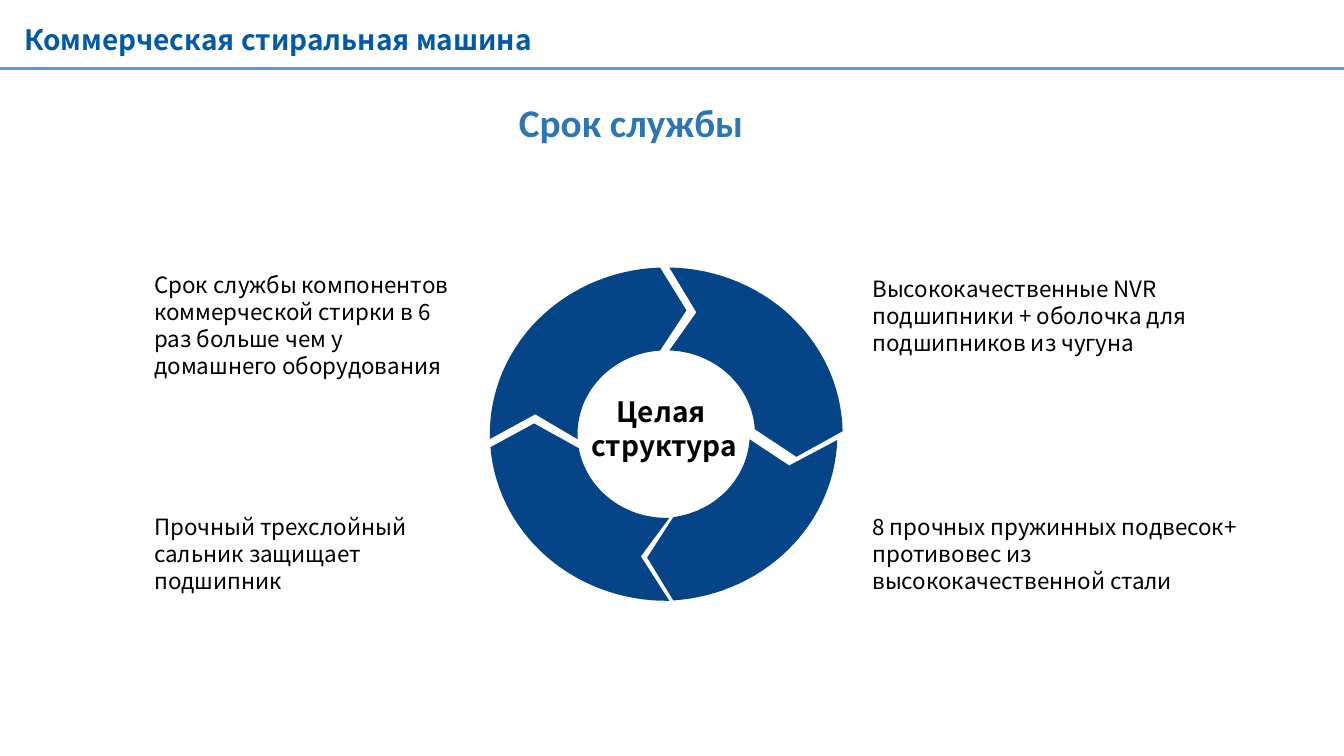
import math

import pptx
import pptx.dml.color
import pptx.enum.shapes
import pptx.enum.text
import pptx.oxml
import pptx.util
from pptx.enum.text import MSO_ANCHOR, MSO_AUTO_SIZE, PP_ALIGN
from pptx.util import Cm, Pt

BODY_FONT = "Noto Sans CJK SC"
RING_CENTER = (16.79, 10.94)
OUTER_RADII = (4.445, 4.2)
INNER_RADII = (2.235, 2.11)


def rgb(hex_color):
    """Turn a hex string into a colour."""
    return pptx.dml.color.RGBColor.from_string(hex_color)


def place(box, left, top, width, height):
    """Set position and size of a shape in centimetres."""
    box.left, box.top, box.width, box.height = map(Cm, (left, top, width, height))


def write(box, text, size, color="000000", font=BODY_FONT, bold=False,
          align=PP_ALIGN.LEFT, anchor=MSO_ANCHOR.TOP, wrap=True, margins=(0.25, 0.13)):
    """Fill a box with text in one format."""
    frame = box.text_frame
    frame.text = text
    frame.word_wrap = wrap
    frame.auto_size = MSO_AUTO_SIZE.NONE if wrap else MSO_AUTO_SIZE.SHAPE_TO_FIT_TEXT
    frame.vertical_anchor = anchor
    frame.margin_left = frame.margin_right = Cm(margins[0])
    frame.margin_top = frame.margin_bottom = Cm(margins[1])
    for paragraph in frame.paragraphs:
        paragraph.alignment = align
        paragraph.line_spacing = Pt(1.2 * size)
        for run in paragraph.runs:
            run.font.name = font
            run.font.size = Pt(size)
            run.font.bold = bold
            run.font.color.rgb = rgb(color)


def add_label(slide, place_cm, text, size, **style):
    """Add a text box with formatted text."""
    label = slide.shapes.add_textbox(*map(Cm, place_cm))
    write(label, text, size, **style)


def arc(center, radii, start, end, steps=30):
    """Return points on an ellipse between two angles in degrees."""
    angles = [math.radians(start + (end - start) * i / steps) for i in range(steps + 1)]
    return [(center[0] + radii[0] * math.cos(a), center[1] + radii[1] * math.sin(a))
            for a in angles]


def add_segment(ring, outer, front_tip, inner, back_tip, shift=0):
    """Add one arrow-like quarter of the ring."""
    center = (RING_CENTER[0] + shift, RING_CENTER[1])
    outline = [*arc(center, OUTER_RADII, *outer), front_tip,
               *arc(center, INNER_RADII, *inner), back_tip]
    points = [(Cm(x), Cm(y)) for x, y in outline]
    builder = ring.shapes.build_freeform(*points[0])
    builder.add_line_segments(points[1:], close=True)
    segment = builder.convert_to_shape()
    segment.shadow.inherit = False
    segment.fill.solid()
    segment.fill.fore_color.rgb = rgb("054487")
    segment.line.fill.background()


def add_rule(slide, y, width):
    """Add the line under the title across the slide."""
    rule = slide.shapes.add_connector(
        pptx.enum.shapes.MSO_CONNECTOR.STRAIGHT, 0, Cm(y), width, Cm(y))
    rule.line.color.rgb = rgb("5B9BD5")
    rule.line.width = Pt(2.25)
    properties = rule._element.spPr
    properties.append(pptx.oxml.parse_xml(
        '<a:effectLst xmlns:a="http://schemas.openxmlformats.org/drawingml/2006/main"/>'))


def main():
    """Build the slide and save it."""
    deck = pptx.Presentation()
    deck.slide_width, deck.slide_height = Cm(33.87), Cm(19.05)
    slide = deck.slides.add_slide(deck.slide_layouts[5])

    add_rule(slide, 1.73, deck.slide_width)
    title = slide.shapes.title
    place(title, 0.36, 0.43, 14.25, 1.12)
    write(title, "Коммерческая стиральная машина", 20, color="005AAB", bold=True)
    add_label(slide, (12.83, 2.36, 6.22, 1.45), "Срок службы", 28, color="2E75B6",
              font="Calibri", bold=True, wrap=False)

    ring = slide.shapes.add_group_shape()
    add_segment(ring, (-89, -1), (20.07, 11.51), (-3.4, -88), (17.55, 7.87))
    add_segment(ring, (178.3, 268), (17.3, 7.82), (266, 176.5), (13.49, 10.44))
    add_segment(ring, (89, 175.5), (13.46, 10.67), (170.3, 88), (16.15, 14.02))
    add_segment(ring, (2, 86), (16.31, 14.05), (82, 3.5), (19.89, 11.73), shift=-0.13)
    add_label(slide, (14.66, 9.84, 4.16, 1.9), "Целая \nструктура", 20, bold=True,
              align=PP_ALIGN.CENTER, margins=(0.1, 0.1))

    advantages = [
        (3.64, 6.52, 8.23, "Срок службы компонентов коммерческой стирки в 6 раз "
                           "больше чем у домашнего оборудования"),
        (21.74, 6.27, 8.61, "Высококачественные NVR подшипники + оболочка для "
                            "подшипников из чугуна"),
        (3.64, 12.27, 8.23, "Прочный трехслойный сальник защищает подшипник"),
        (21.74, 12.27, 9.91, "8 прочных пружинных подвесок+ противовес из "
                             "высококачественной стали"),
    ]
    for left, top, width, text in advantages:
        add_label(slide, (left, top, width, 3.35), text, 16, anchor=MSO_ANCHOR.MIDDLE)

    deck.save("out.pptx")


if __name__ == "__main__":
    main()
